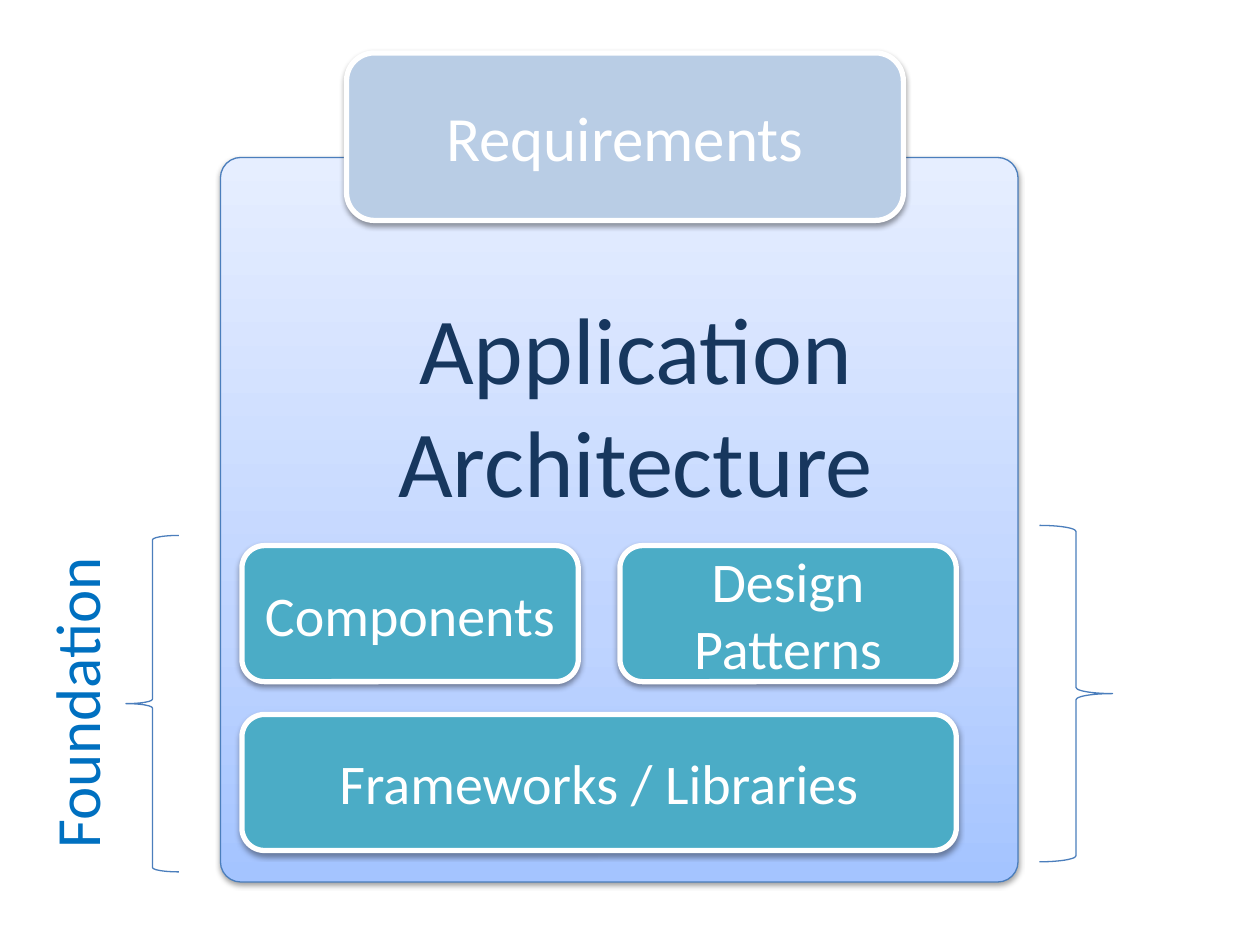
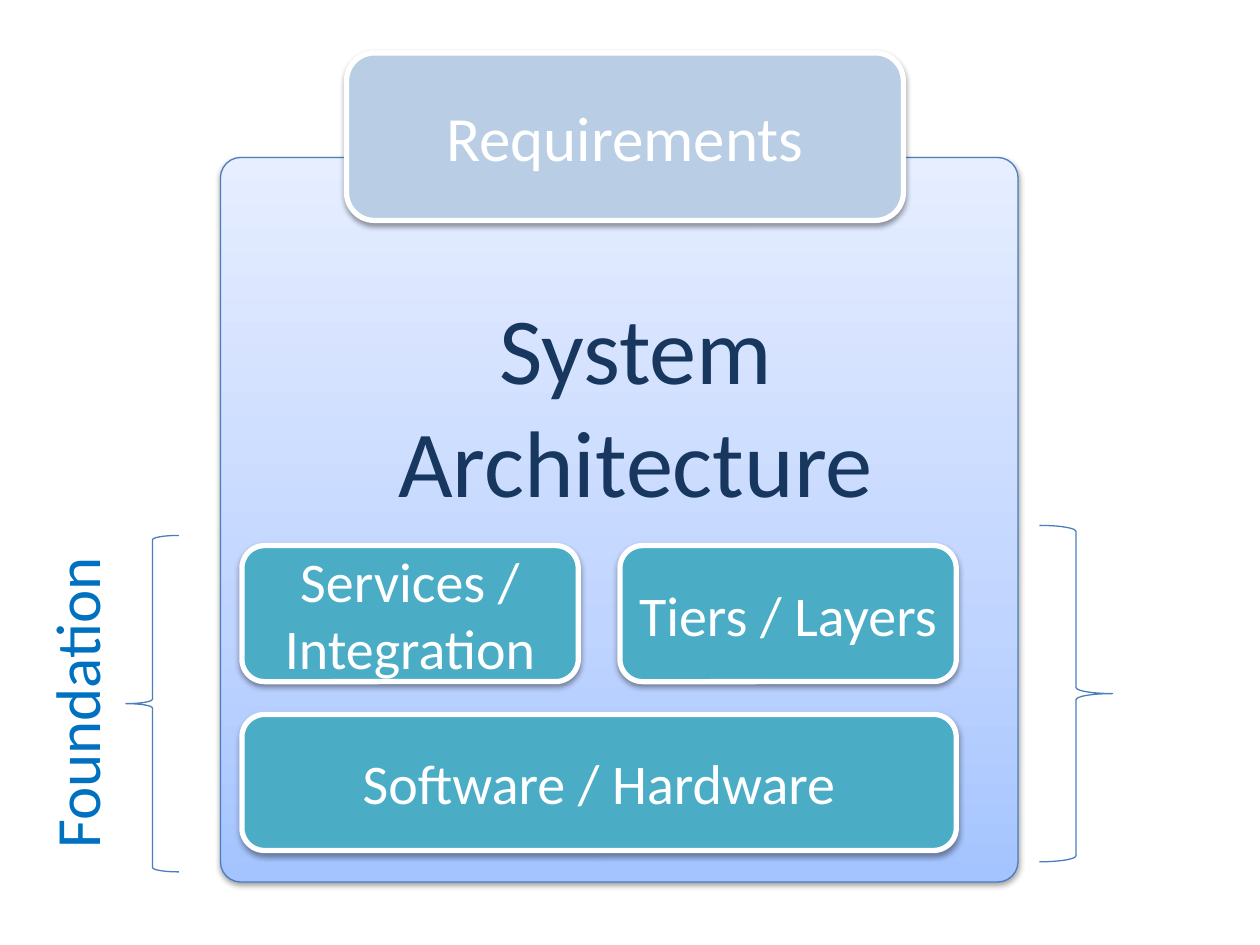
from copy import deepcopy

from lxml import etree
from pptx import Presentation
from pptx.dml.color import RGBColor
from pptx.enum import shapes, text
from pptx.oxml.ns import qn
from pptx.util import Inches, Pt

WHITE = RGBColor(0xFF, 0xFF, 0xFF)
TEAL = RGBColor(0x4B, 0xAC, 0xC6)
PALE = RGBColor(0xB9, 0xCD, 0xE5)
NAVY = RGBColor(0x17, 0x37, 0x5E)
BLUE = RGBColor(0x00, 0x70, 0xC0)
EDGE = RGBColor(0x4B, 0x7E, 0xBC)
# Panel gradient, from bottom to top
FADE = [(0, RGBColor(0xA4, 0xC4, 0xFF)),
        (0.35, RGBColor(0xBF, 0xD4, 0xFF)),
        (1, RGBColor(0xE6, 0xEE, 0xFF))]
FONT = "Calibri"
KIND = shapes.MSO_SHAPE

# Foundation grid
LEFT, TOP = 1.92, 4.33
WIDE, HIGH = 2.67, 1.08
STEP_X, STEP_Y = 3, 1.34

# Title, two upper blocks, base block
SLIDES = [
    ("Application Architecture", ["Components", "Design Patterns"],
     "Frameworks / Libraries"),
    ("System Architecture", ["Services / Integration", "Tiers / Layers"],
     "Software / Hardware"),
]


def write(shape, words, size, color=WHITE, align=text.PP_ALIGN.CENTER,
          anchor=text.MSO_ANCHOR.MIDDLE):
    frame = shape.text_frame
    frame.word_wrap = True
    frame.vertical_anchor = anchor
    para = frame.paragraphs[0]
    para.alignment = align
    run = para.add_run()
    run.text = words
    run.font.name, run.font.size = FONT, Pt(size)
    run.font.color.rgb = color


class Deck:
    def __init__(self):
        self.prs = Presentation()
        self.prs.slide_width, self.prs.slide_height = Inches(10), Inches(7.5)
        self.slide = None

    def page(self):
        self.slide = self.prs.slides.add_slide(self.prs.slide_layouts[6])

    def shape(self, kind, box, edge=EDGE, width=0.75):
        item = self.slide.shapes.add_shape(kind, *map(Inches, box))
        item.shadow.inherit = False
        item.line.color.rgb = edge
        item.line.width = Pt(width)
        return item

    def shade(self, item):
        """Soft shadow just below the shape."""
        glow = item._element.spPr.find(qn("a:effectLst"))
        drop = etree.SubElement(glow, qn("a:outerShdw"), blurRad="40000",
                                dist="20000", dir="5400000", rotWithShape="0")
        tint = etree.SubElement(drop, qn("a:srgbClr"), val="000000")
        etree.SubElement(tint, qn("a:alpha"), val="38000")

    def panel(self, box):
        item = self.shape(KIND.ROUNDED_RECTANGLE, box)
        item.adjustments[0] = 0.028
        item.fill.gradient()
        item.fill.gradient_angle = 90
        stops = item._element.spPr.find(".//" + qn("a:gsLst"))
        stops.append(deepcopy(stops[0]))
        for stop, (place, color) in zip(item.fill.gradient_stops, FADE):
            stop.position = place
            stop.color.rgb = color
        self.shade(item)

    def block(self, words, box, fill=TEAL, size=32):
        item = self.shape(KIND.ROUNDED_RECTANGLE, box, WHITE, 3)
        item.fill.solid()
        item.fill.fore_color.rgb = fill
        self.shade(item)
        write(item, words, size)

    def brace(self, kind, box):
        self.shape(kind, box).fill.background()

    def label(self, words, box, size, color, turn=0, **style):
        item = self.slide.shapes.add_textbox(*map(Inches, box))
        item.rotation = turn
        write(item, words, size, color, anchor=text.MSO_ANCHOR.TOP, **style)


def main():
    deck = Deck()
    for title, pair, base in SLIDES:
        deck.page()
        deck.panel((1.75, 1.25, 6.33, 5.75))

        # Foundation blocks
        for col, words in enumerate(pair):
            deck.block(words, (LEFT + col * STEP_X, TOP, WIDE, HIGH))
        deck.block(base, (LEFT, TOP + STEP_Y, STEP_X + WIDE, HIGH))

        # Title and side braces
        deck.label(title, (2.92, 2.25, 4.25, 1.92), 54, NAVY)
        deck.brace(KIND.RIGHT_BRACE, (8.25, 4.17, 0.58, 2.67))
        deck.brace(KIND.LEFT_BRACE, (1, 4.25, 0.42, 2.67))
        deck.label("Foundation", (-0.69, 5.19, 2.58, 0.71), 36, BLUE,
                   turn=270, align=text.PP_ALIGN.LEFT)

        # Requirements on top
        deck.block("Requirements", (2.75, 0.42, 4.42, 1.33), PALE, 36)
    deck.prs.save("out.pptx")


if __name__ == "__main__":
    main()
